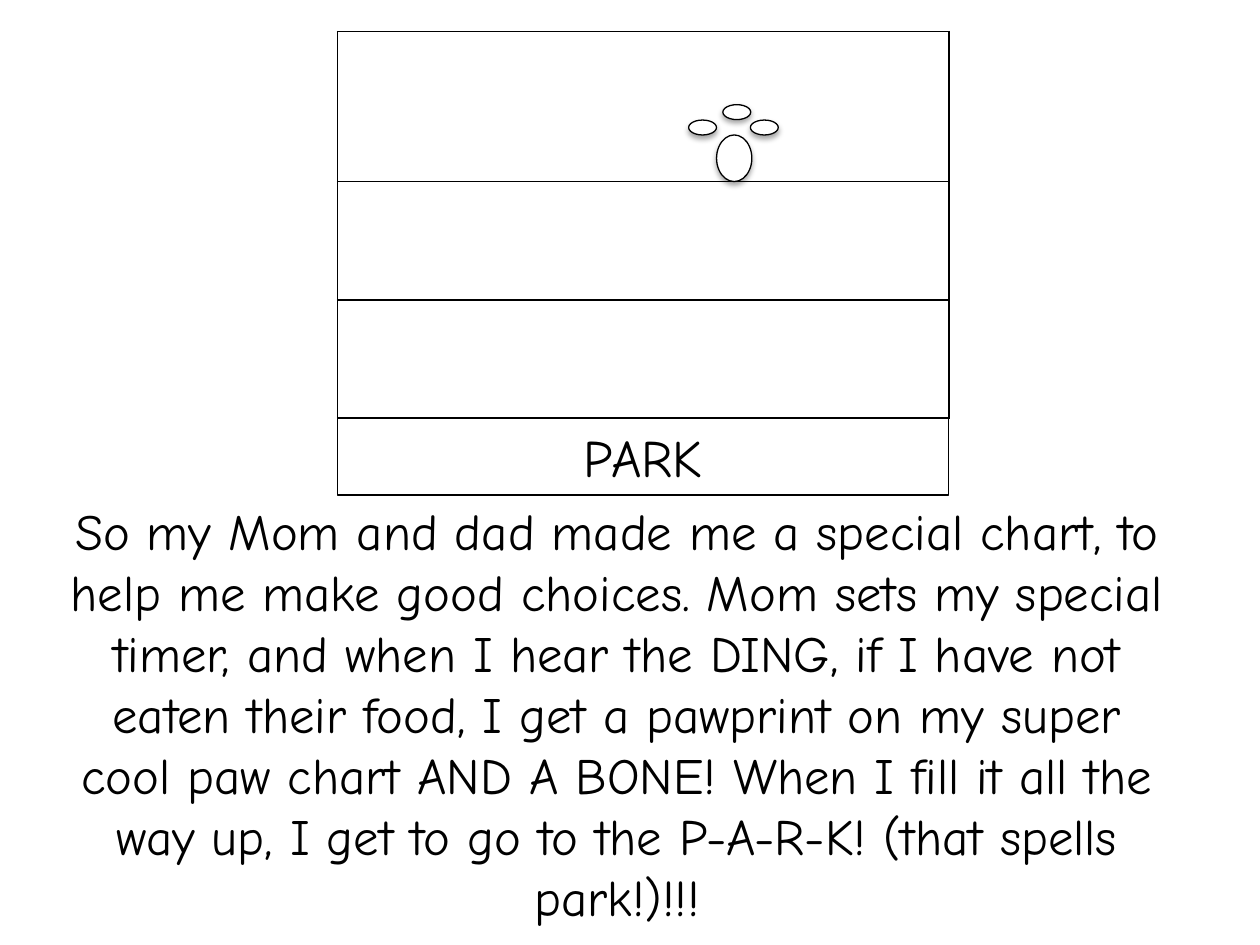
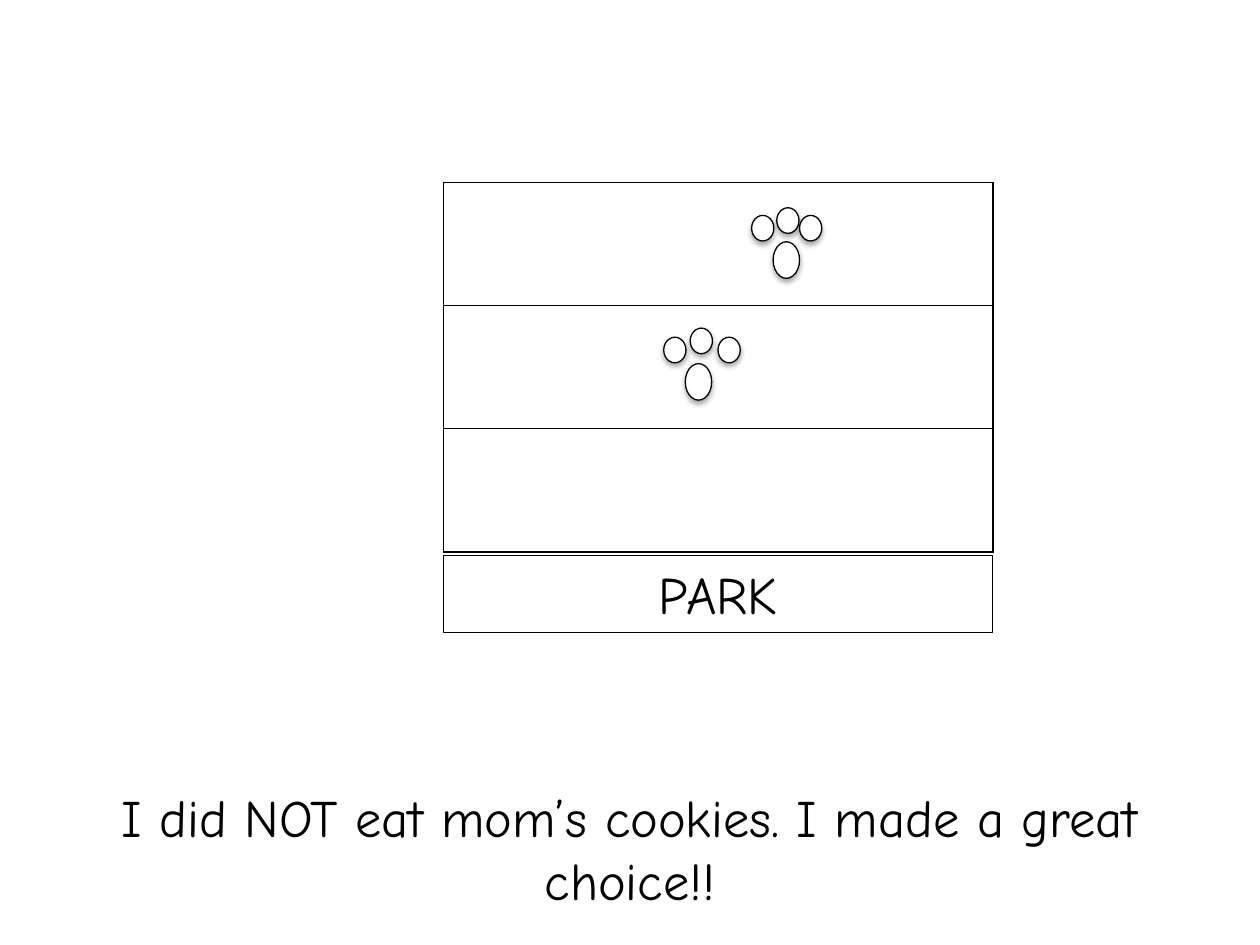
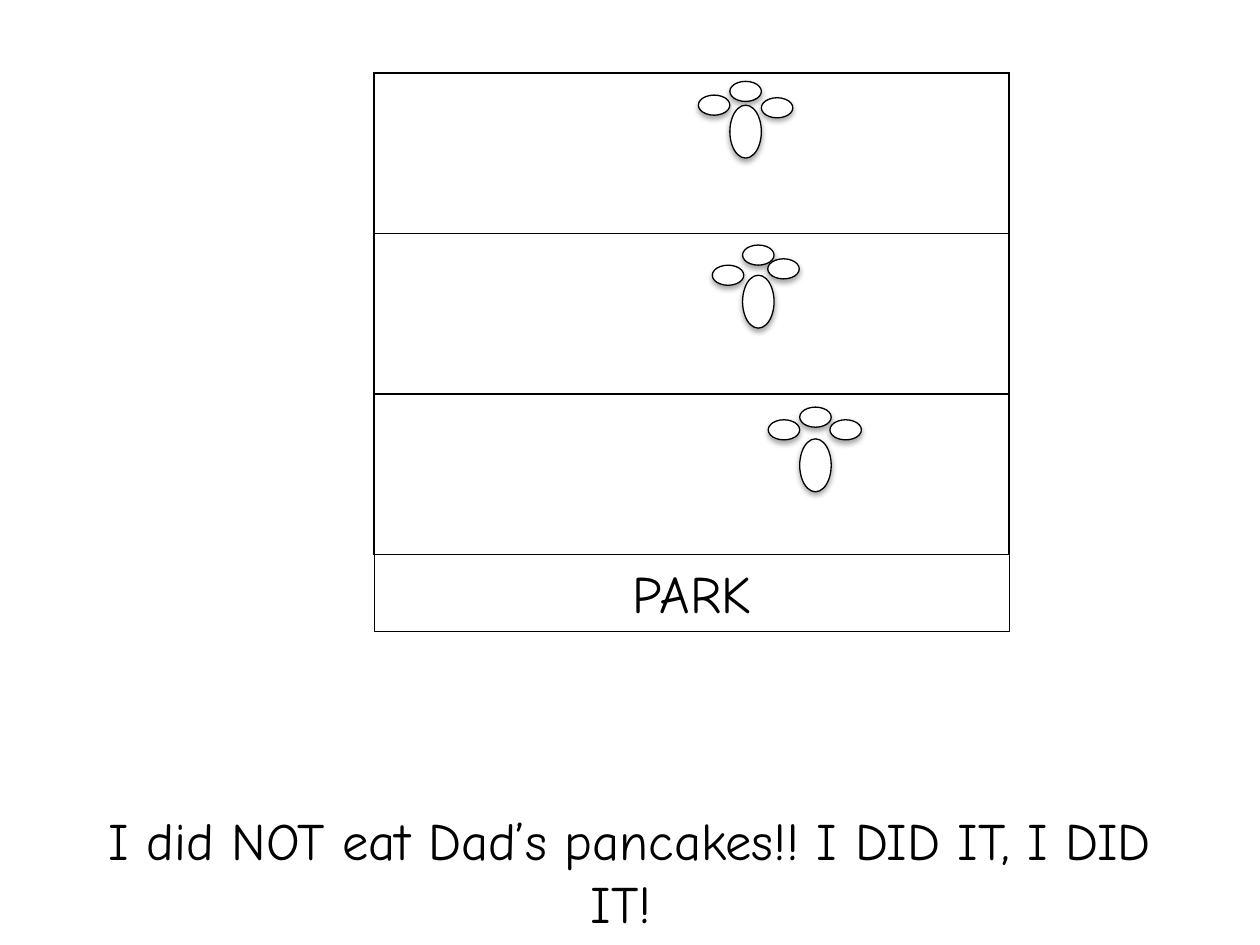
from collections import namedtuple
from itertools import accumulate

from lxml.etree import SubElement
from pptx import Presentation
from pptx.dml.color import RGBColor
from pptx.enum.shapes import MSO_SHAPE as Preset
from pptx.enum.text import MSO_ANCHOR as Anchor, MSO_AUTO_SIZE as AutoSize, PP_ALIGN as Align
from pptx.oxml.ns import qn
from pptx.util import Inches, Pt

# The slide is a grid of 100 columns by 75 rows of square cells.
WIDTH, HEIGHT = Inches(10), Inches(7.5)
CELL = WIDTH / 100
INK, PAPER = "000000", "FFFFFF"
FONT = "Comic Neue"
GOAL_HEIGHT = 6.1

Box = namedtuple("Box", "left top width height")
# The paw kit holds grid lengths; toe sizes are shares of the palm.
PawKit = namedtuple("PawKit", "palm_width palm_height toe_width toe_height")
# x and y are shares of the chart's row; toes are shares of the palm.
Paw = namedtuple("Paw", "x y toes")
Page = namedtuple("Page", "story story_size story_box chart_box goal_gap row_heights kit paws")

PAGES = [
    Page("So my Mom and dad made me a special chart, to help me make good choices. "
         "Mom sets my special timer, and when I hear the DING, if I have not eaten "
         "their food, I get a pawprint on my super cool paw chart AND A BONE! "
         "When I fill it all the way up, I get to go to the P-A-R-K! "
         "(that spells park!)!!!",
         29, Box(4, 39.2, 90, 17.3), Box(26.8, 2.5, 48.5, 30.7), 0, [11.9, 9.4, 9.4],
         PawKit(2.8, 3.7, 0.79, 0.32),
         [Paw(0.62, 0.69, [(-0.79, -0.32), (0.18, -0.65), (0.96, -0.32)])]),
    Page("I did NOT eat mom’s cookies. I made a great choice!!",
         30, Box(5, 61.8, 90, 8.8), Box(35.2, 14.5, 43.6, 29.3), 0.3, [29.3 / 3] * 3,
         PawKit(2.1, 2.9, 0.84, 0.7),
         [Paw(0.6, 0.48, [(-0.81, -0.72), (0.14, -0.93), (1, -0.72)]),
          Paw(0.44, 0.47, [(-0.81, -0.72), (0.19, -0.97), (1.24, -0.72)])]),
    Page("I did NOT eat Dad’s pancakes!! I DID IT, I DID IT! ",
         30, Box(5, 63.6, 90, 16.6), Box(29.7, 5.8, 50.4, 38.2), 0, [38.2 / 3] * 3,
         PawKit(2.5, 4.2, 1, 0.38),
         [Paw(0.56, 0.2, [(-1, -0.19), (0, -0.45), (1, -0.14)]),
          Paw(0.58, 0.26, [(-0.96, -0.19), (0, -0.57), (0.8, -0.31)]),
          Paw(0.67, 0.28, [(-1, -0.36), (0, -0.6), (0.96, -0.36)])]),
]


def color(value):
    return RGBColor.from_string(value)


def emu(box):
    return [round(length * CELL) for length in box]


def write(frame, text, size):
    frame.text = text
    frame.word_wrap = True
    paragraph = frame.paragraphs[0]
    paragraph.alignment = Align.CENTER
    font = paragraph.runs[0].font
    font.name, font.size = FONT, Pt(size)
    font.color.rgb = color(INK)


def outline(shape):
    shape.shadow.inherit = False
    shape.line.color.rgb = color(INK)
    shape.line.width = Pt(0.75)


def add_story(slide, page):
    slide.shapes.title.element.getparent().remove(slide.shapes.title.element)
    story = slide.placeholders[1]
    story.left, story.top, story.width, story.height = emu(page.story_box)
    frame = story.text_frame
    write(frame, page.story, page.story_size)
    frame.auto_size = AutoSize.NONE
    frame.vertical_anchor = Anchor.TOP


def add_borders(cell):
    properties = cell._tc.get_or_add_tcPr()
    for index, side in enumerate(("lnL", "lnR", "lnT", "lnB")):
        border = properties.makeelement(qn(f"a:{side}"), {"w": str(Pt(1))})
        fill = SubElement(border, qn("a:solidFill"))
        SubElement(fill, qn("a:srgbClr"), val=INK)
        properties.insert(index, border)


def add_chart_rows(slide, page):
    table = slide.shapes.add_table(len(page.row_heights), 1, *emu(page.chart_box)).table
    table.first_row = table.horz_banding = False
    for row, height in zip(table.rows, page.row_heights):
        row.height = round(height * CELL)
        cell = row.cells[0]
        cell.fill.background()
        add_borders(cell)


def add_pad(slide, box):
    """Draw one oval of a paw, with its soft shadow below."""
    pad = slide.shapes.add_shape(Preset.OVAL, *emu(box))
    outline(pad)
    pad.fill.solid()
    pad.fill.fore_color.rgb = color(PAPER)
    effects = pad._element.spPr.find(qn("a:effectLst"))
    shadow = SubElement(effects, qn("a:outerShdw"), blurRad=str(Pt(3.1)),
                        dist=str(Pt(1.8)), dir="5400000", rotWithShape="0")
    tint = SubElement(shadow, qn("a:srgbClr"), val=INK)
    SubElement(tint, qn("a:alpha"), val="35000")


def add_paw(slide, row_box, kit, paw):
    width, height = kit.palm_width, kit.palm_height
    left = row_box.left + paw.x * row_box.width
    top = row_box.top + paw.y * row_box.height
    for x, y in paw.toes:
        add_pad(slide, Box(left + x * width, top + y * height,
                           kit.toe_width * width, kit.toe_height * height))
    add_pad(slide, Box(left, top, width, height))


def add_goal(slide, page):
    chart = page.chart_box
    goal_box = Box(chart.left, chart.top + chart.height + page.goal_gap,
                   chart.width, GOAL_HEIGHT)
    goal = slide.shapes.add_shape(Preset.RECTANGLE, *emu(goal_box))
    outline(goal)
    goal.fill.background()
    write(goal.text_frame, "PARK", 30)
    goal.text_frame.auto_size = AutoSize.SHAPE_TO_FIT_TEXT
    goal.text_frame.vertical_anchor = Anchor.TOP


def add_page(deck, page):
    slide = deck.slides.add_slide(deck.slide_layouts.get_by_name("Section Header"))
    add_story(slide, page)
    add_chart_rows(slide, page)
    chart = page.chart_box
    row_tops = accumulate(page.row_heights, initial=chart.top)
    for top, height, paw in zip(row_tops, page.row_heights, page.paws):
        add_paw(slide, Box(chart.left, top, chart.width, height), page.kit, paw)
    add_goal(slide, page)


def main():
    deck = Presentation()
    deck.slide_width, deck.slide_height = WIDTH, HEIGHT
    for page in PAGES:
        add_page(deck, page)
    deck.save("out.pptx")


if __name__ == "__main__":
    main()
